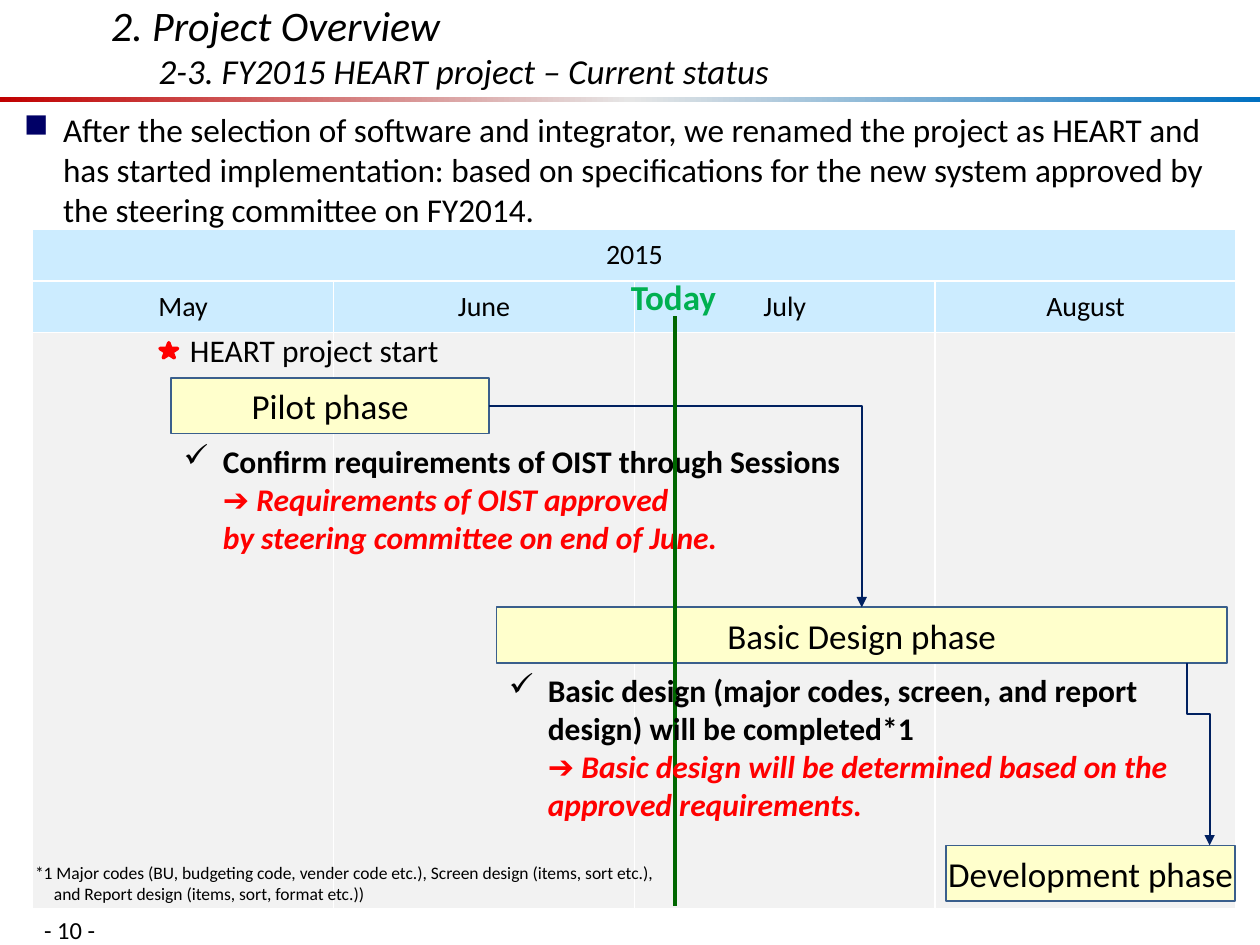
from copy import deepcopy
from dataclasses import dataclass
from typing import NamedTuple

from pptx import Presentation
from pptx.dml.color import RGBColor
from pptx.enum.shapes import MSO_CONNECTOR as Conn, MSO_SHAPE as Shape
from pptx.enum.text import MSO_ANCHOR as Anchor, PP_ALIGN as Align
from pptx.oxml.ns import qn
from pptx.oxml.xmlchemy import OxmlElement
from pptx.util import Emu, Inches, Pt

WIDTH, HEIGHT = Inches(10), Inches(7.5)
FONT, BLACK, RED, NAVY = "Calibri", "000000", "FF0000", "002060"
BAR_HEIGHT = 5.87


class Box(NamedTuple):
    """Left, top, width and height in percent of the slide."""
    x: float
    y: float
    w: float
    h: float


class Run(NamedTuple):
    """Text with its character format; a newline is a line break."""
    text: str
    size: float
    color: str = BLACK
    bold: bool = False
    italic: bool = False


@dataclass
class TextBlock:
    """A one-paragraph text box."""
    box: Box
    runs: list[Run]
    margins: tuple[float, float] = (0.1, 0.05)
    anchor: Anchor = Anchor.TOP
    align: Align = Align.LEFT
    hang: float = 0
    bullet: str = ""
    bullet_color: str = BLACK


class Phase(NamedTuple):
    """A labelled bar on the schedule."""
    name: str
    x: float
    y: float
    w: float


def px(share: float) -> Emu:
    """Horizontal length from a percentage of the width."""
    return Emu(round(WIDTH * share / 100))


def py(share: float) -> Emu:
    """Vertical length from a percentage of the height."""
    return Emu(round(HEIGHT * share / 100))


def place(box: Box) -> tuple[Emu, Emu, Emu, Emu]:
    """Convert a box to slide lengths."""
    return px(box.x), py(box.y), px(box.w), py(box.h)


def rgb(color: str) -> RGBColor:
    """Colour from a hex string."""
    return RGBColor.from_string(color)


def add_element(parent, tag: str, **attrs: str):
    """Append a drawing element."""
    el = OxmlElement(tag)
    for key, value in attrs.items():
        el.set(key, value)
    parent.append(el)
    return el


def write(p, runs: list[Run]) -> None:
    """Fill a paragraph run by run."""
    for run in runs:
        for i, line in enumerate(run.text.split("\n")):
            if i:
                p.add_line_break()
            if line:
                r = p.add_run()
                r.text = line
                f = r.font
                f.name, f.size = FONT, Pt(run.size)
                f.bold, f.italic = run.bold, run.italic
                f.color.rgb = rgb(run.color)


def set_margins(tf, x: float, y: float) -> None:
    """Set side and top/bottom insets in inches."""
    tf.margin_left = tf.margin_right = Inches(x)
    tf.margin_top = tf.margin_bottom = Inches(y)


def add_text(s, block: TextBlock) -> None:
    """Draw a text block."""
    tf = s.shapes.add_textbox(*place(block.box)).text_frame
    tf.word_wrap, tf.vertical_anchor = True, block.anchor
    set_margins(tf, *block.margins)
    p = tf.paragraphs[0]
    p.alignment = block.align
    pPr = p._p.get_or_add_pPr()
    if block.hang:
        pPr.set("marL", str(Inches(block.hang)))
        pPr.set("indent", str(-Inches(block.hang)))
    if block.bullet:
        clr = add_element(pPr, "a:buClr")
        add_element(clr, "a:srgbClr", val=block.bullet_color)
        add_element(pPr, "a:buChar", char=block.bullet)
    write(p, block.runs)


def add_solid(s, kind: Shape, box: Box, fill: str, line: str, width: float):
    """Draw a filled and outlined preset shape."""
    sp = s.shapes.add_shape(kind, *place(box))
    sp.shadow.inherit = False
    sp.fill.solid()
    sp.fill.fore_color.rgb = rgb(fill)
    sp.line.color.rgb = rgb(line)
    sp.line.width = Pt(width)
    return sp


def add_phase(s, phase: Phase):
    """Draw a phase bar and return it."""
    box = Box(phase.x, phase.y, phase.w, BAR_HEIGHT)
    sp = add_solid(s, Shape.PENTAGON, box, "FFFFCC", "3A5F8C", 1)
    sp.adjustments[0] = 0
    tf = sp.text_frame
    set_margins(tf, 0, 0)
    tf.vertical_anchor = Anchor.MIDDLE
    tf.paragraphs[0].alignment = Align.CENTER
    write(tf.paragraphs[0], [Run(phase.name, 20)])
    return sp


def style_line(c, color: str, width: float, arrow: bool = False) -> None:
    """Format a connector."""
    c.line.color.rgb = rgb(color)
    c.line.width = Pt(width)
    if arrow:
        add_element(c.line._get_or_add_ln(), "a:tailEnd", type="triangle")
    add_element(c._element.spPr, "a:effectLst")


def add_corner(s, start, end) -> None:
    """Run an arrow from a bar's right side to another bar's top."""
    c = s.shapes.add_connector(Conn.ELBOW, 0, 0, 0, 0)
    c.begin_connect(start, 3)
    c.end_connect(end, 0)
    c._element.spPr.find(qn("a:prstGeom")).set("prst", "bentConnector2")
    style_line(c, NAVY, 1, True)


def add_step_down(s, x1: Emu, y1: Emu, x2: Emu, y2: Emu, bend: float) -> None:
    """Run an arrow down, across and down, bending at a share of its drop."""
    cx, cy, dx, dy = (x1 + x2) // 2, (y1 + y2) // 2, (x2 - x1) // 2, (y2 - y1) // 2
    c = s.shapes.add_connector(Conn.ELBOW, cx + dy, cy - dx, cx - dy, cy + dx)
    spPr = c._element.spPr
    spPr.find(qn("a:xfrm")).set("rot", str(270 * 60000))
    guides = spPr.find(qn("a:prstGeom")).get_or_add_avLst()
    add_element(guides, "a:gd", name="adj1", fmla=f"val {round(bend * 100000)}")
    style_line(c, NAVY, 1, True)


def add_rule(s, box: Box, stops: list[tuple[float, str]]) -> None:
    """Draw the gradient rule below the title."""
    sp = s.shapes.add_shape(Shape.RECTANGLE, *place(box))
    sp.shadow.inherit = False
    sp.line.fill.background()
    sp.fill.gradient()
    sp.fill.gradient_angle = 0
    gs = sp._element.spPr.find(".//" + qn("a:gsLst"))
    gs.insert(1, deepcopy(gs[0]))
    for stop, (position, color) in zip(sp.fill.gradient_stops, stops):
        stop.position, stop.color.rgb = position, rgb(color)


def add_calendar(s, box: Box, year: str, months: list[str], header: float) -> None:
    """Draw the year, month and schedule rows."""
    table = s.shapes.add_table(3, len(months), *place(box)).table
    table.horz_banding = False
    for row, h in zip(table.rows, (header, header, box.h - 2 * header)):
        row.height = py(h)
    labels = [[year] + [""] * (len(months) - 1), months, [""] * len(months)]
    for i, row in enumerate(labels):
        for j, label in enumerate(row):
            cell = table.cell(i, j)
            cell.fill.solid()
            cell.fill.fore_color.rgb = rgb("CCECFF" if i < 2 else "F2F2F2")
            cell.vertical_anchor = Anchor.MIDDLE
            p = cell.text_frame.paragraphs[0]
            p.alignment = Align.CENTER
            write(p, [Run(label, 16)])
    table.cell(0, 0).merge(table.cell(0, len(months) - 1))


def add_note(s, box: Box, task: str, result: str) -> None:
    """Draw a checked task with its result in red."""
    runs = [Run(task + "\n", 18, bold=True), Run(result, 18, RED, True, True)]
    add_text(s, TextBlock(box, runs, hang=0.31, bullet="✓"))


def main() -> None:
    """Build the slide."""
    prs = Presentation()
    prs.slide_width, prs.slide_height = WIDTH, HEIGHT
    s = prs.slides.add_slide(prs.slide_layouts[6])
    add_text(s, TextBlock(Box(3.5, 96.8, 14.2, 4), [Run("- 10 -", 14)], (0, 0)))
    add_rule(s, Box(0, 10.27, 100, 0.53), [(0, "C00000"), (0.5, "E6E6E6"), (1, "0070C0")])
    add_text(s, TextBlock(Box(1.9, 11.6, 96.2, 12.8), [Run(
        "After the selection of software and integrator, we renamed the project as HEART and "
        "has started implementation: based on specifications for the new system approved by "
        "the steering committee on FY2014.", 19)], (0, 0), hang=0.31, bullet="■", bullet_color="000066"))
    add_text(s, TextBlock(Box(8.8, 1.33, 79.4, 8.4), [
        Run("2. Project Overview\n", 24, italic=True),
        Run("2-3. FY2015 HEART project – Current status", 20, italic=True)],
        (0, 0), Anchor.BOTTOM, hang=0.38))
    add_calendar(s, Box(2.6, 24.27, 95.5, 71.87), "2015", ["May", "June", "July", "August"], 5.47)
    add_solid(s, Shape.STAR_5_POINT, Box(12.7, 36.27, 1.4, 1.6), RED, RED, 2)
    add_text(s, TextBlock(Box(14.1, 33.2, 32.7, 7.73), [Run("HEART project start", 18)], anchor=Anchor.MIDDLE))

    pilot, design, development = [add_phase(s, phase) for phase in (
        Phase("Pilot phase", 13.6, 40, 25.2),
        Phase("Basic Design phase", 39.4, 64.27, 58),
        Phase("Development phase", 75.1, 89.47, 22.9))]
    add_corner(s, pilot, design)
    add_step_down(s, px(94.2), design.top + design.height, px(96), development.top, 0.28)

    add_note(s, Box(13.6, 46.13, 54.9, 18), "Confirm requirements of OIST through Sessions",
             "➔ Requirements of OIST approved\nby steering committee on end of June.")
    today = s.shapes.add_connector(Conn.STRAIGHT, px(53.6), py(33.47), px(53.6), py(95.87))
    style_line(today, "006600", 2.25)
    add_text(s, TextBlock(Box(46.8, 29.6, 13.3, 3.47), [Run("Today", 20, "00B050", True)],
                          anchor=Anchor.MIDDLE, align=Align.CENTER))
    add_note(s, Box(39.4, 70.4, 56.6, 18),
             "Basic design (major codes, screen, and report design) will be completed*1",
             "➔ Basic design will be determined based on the\napproved requirements.")
    add_text(s, TextBlock(Box(1.8, 90.53, 56.6, 5.07), [Run(
        "*1 Major codes (BU, budgeting code, vender code etc.), Screen design (items, sort etc.),\n"
        "and Report design (items, sort, format etc.))", 10)], hang=0.15))
    prs.save("out.pptx")


if __name__ == "__main__":
    main()
